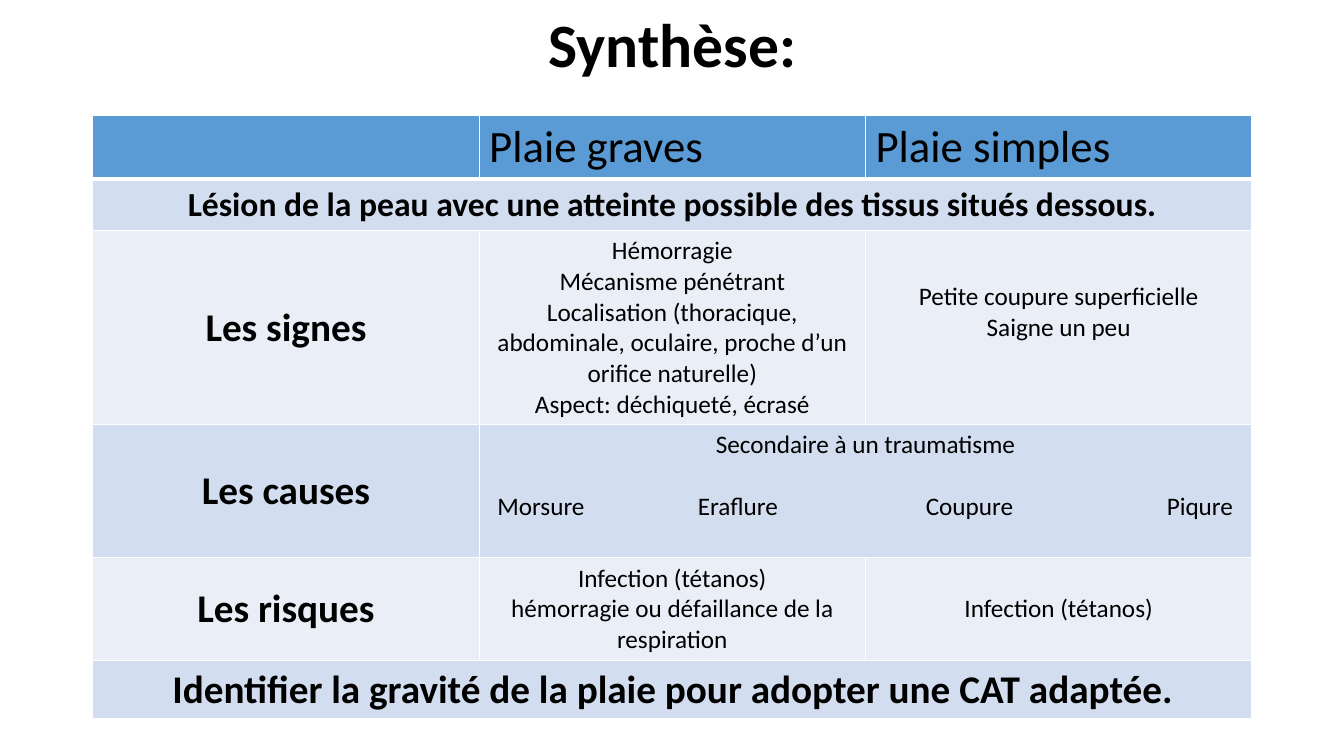
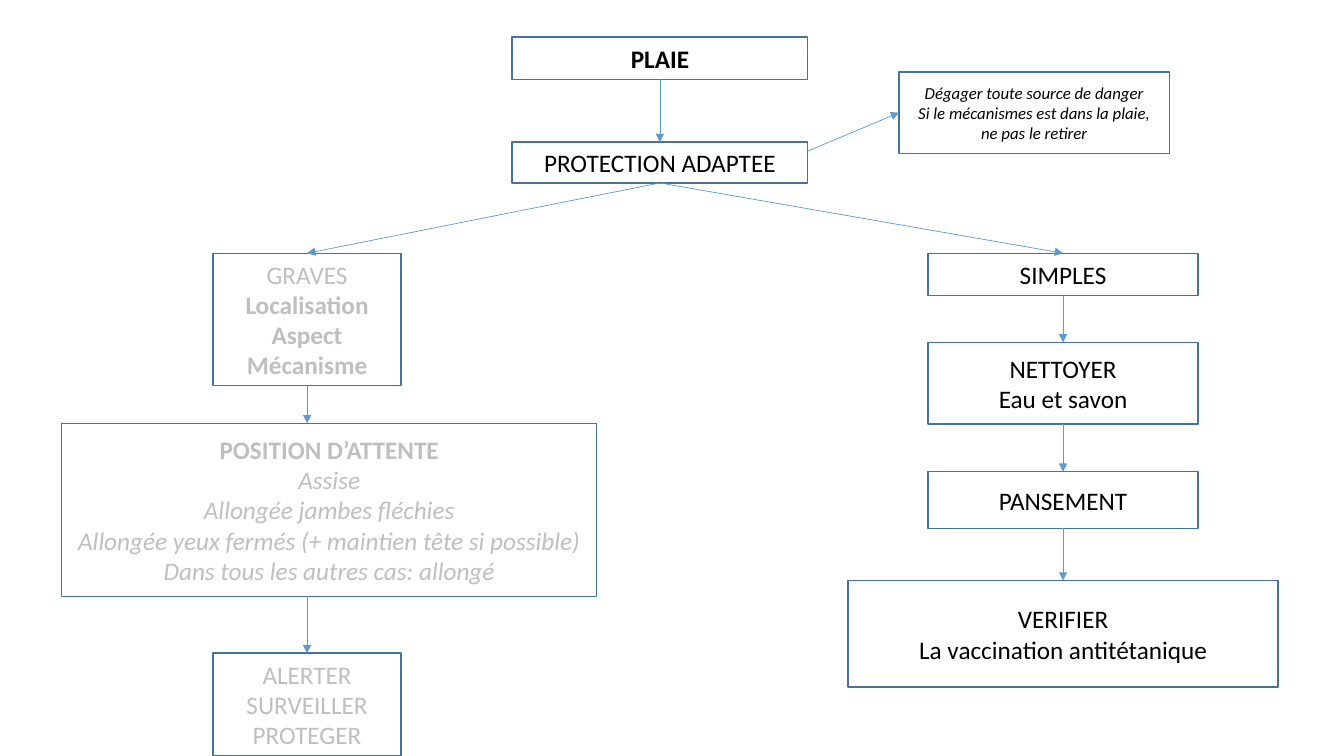
import pptx
import pptx.dml.color
import pptx.enum.shapes
import pptx.enum.text
import pptx.oxml.ns
import pptx.util
from lxml import etree

RGBColor = pptx.dml.color.RGBColor
ALIGN = pptx.enum.text.PP_ALIGN
ANCHOR = pptx.enum.text.MSO_ANCHOR
qn = pptx.oxml.ns.qn

# Colours
BLACK = RGBColor(0x00, 0x00, 0x00)
WHITE = RGBColor(0xFF, 0xFF, 0xFF)
GREY = RGBColor(0xBF, 0xBF, 0xBF)
BLUE = RGBColor(0x5B, 0x9B, 0xD5)
OUTLINE = RGBColor(0x43, 0x73, 0x9E)
BAND_DARK = RGBColor(0xD2, 0xDE, 0xEF)
BAND_LIGHT = RGBColor(0xEA, 0xEF, 0xF7)

# Sides of a rectangle for joined connectors
TOP, LEFT, BOTTOM = 0, 1, 2
FONT = "Calibri"


def write(paragraph, text, size=18, bold=False, italic=False, color=BLACK,
          align=ALIGN.CENTER, before=0, tabs=(), spacing=None):
    """Fill one paragraph with text in the given format."""
    if tabs:
        tab_list = etree.SubElement(paragraph._p.get_or_add_pPr(), qn("a:tabLst"))
        for stop in tabs:
            etree.SubElement(tab_list, qn("a:tab"),
                             pos=str(pptx.util.Inches(stop)), algn="l")
    paragraph.alignment = align
    if before:
        paragraph.space_before = pptx.util.Pt(before)
    if spacing:
        paragraph.line_spacing = spacing
    run = paragraph.add_run()
    run.text = text
    font = run.font
    font.name, font.size = FONT, pptx.util.Pt(size)
    font.bold, font.italic = bold, italic
    font.color.rgb = color


def write_lines(frame, lines, **shared):
    """Write one paragraph per line; a line is text or (text, own format)."""
    for index, line in enumerate(lines):
        text, own = (line, {}) if isinstance(line, str) else line
        paragraph = frame.add_paragraph() if index else frame.paragraphs[0]
        write(paragraph, text, **{**shared, **own})


class Deck:
    """Style and current slide; positions are on a grid of 100 x 100."""

    def __init__(self):
        self.file = pptx.Presentation()
        self.file.slide_width = pptx.util.Inches(13.33)
        self.file.slide_height = pptx.util.Inches(7.5)
        self.slide = None

    def x(self, columns):
        return round(self.file.slide_width * columns / 100)

    def y(self, rows):
        return round(self.file.slide_height * rows / 100)

    def new_slide(self):
        self.slide = self.file.slides.add_slide(self.file.slide_layouts[6])

    def title(self, text):
        heading = self.slide.shapes.add_textbox(
            self.x(6.9), 0, self.x(86.25), self.y(12.7)).text_frame
        heading.word_wrap = True
        heading.vertical_anchor = ANCHOR.MIDDLE
        write(heading.paragraphs[0], text, size=44, bold=True, spacing=0.9)

    def step(self, center, top, width, height, lines, **fmt):
        """Outlined box centred on a column."""
        box = self.slide.shapes.add_shape(
            pptx.enum.shapes.MSO_SHAPE.RECTANGLE, self.x(center - width / 2),
            self.y(top), self.x(width), self.y(height))
        box.shadow.inherit = False
        box.fill.background()
        box.line.color.rgb = OUTLINE
        box.line.width = pptx.util.Pt(1)
        box.text_frame.word_wrap = True
        box.text_frame.vertical_anchor = ANCHOR.MIDDLE
        write_lines(box.text_frame, lines, **fmt)
        return box

    def arrow(self, start, end):
        """Arrow between ends given as (box, side) or (column, row)."""
        link = self.slide.shapes.add_connector(
            pptx.enum.shapes.MSO_CONNECTOR.STRAIGHT, 0, 0, 0, 0)
        if isinstance(start[0], (int, float)):
            link.begin_x, link.begin_y = self.x(start[0]), self.y(start[1])
        else:
            link.begin_connect(*start)
        if isinstance(end[0], (int, float)):
            link.end_x, link.end_y = self.x(end[0]), self.y(end[1])
        else:
            link.end_connect(*end)
        link.line.color.rgb = BLUE
        link.line.width = pptx.util.Pt(0.5)
        etree.SubElement(link.line._get_or_add_ln(), qn("a:tailEnd"), type="triangle")
        etree.SubElement(link._element.spPr, qn("a:effectLst"))

    def table(self, left, top, width, columns, heights):
        grid = self.slide.shapes.add_table(
            len(heights), columns, self.x(left), self.y(top),
            self.x(width), self.y(sum(heights))).table
        grid.first_row = grid.horz_banding = False
        for row, height in zip(grid.rows, heights):
            row.height = self.y(height)
        for index, row in enumerate(grid.rows):
            band = BAND_DARK if index % 2 else BAND_LIGHT
            for cell in row.cells:
                self.borders(cell, bottom=3 if index == 0 else 1)
                cell.fill.solid()
                cell.fill.fore_color.rgb = band if index else BLUE
                cell.vertical_anchor = ANCHOR.MIDDLE
        return grid

    def borders(self, cell, bottom):
        properties = cell._tc.get_or_add_tcPr()
        for side, points in (("L", 1), ("R", 1), ("T", 1), ("B", bottom)):
            edge = etree.SubElement(properties, qn("a:ln" + side),
                                    w=str(pptx.util.Pt(points)))
            fill = etree.SubElement(edge, qn("a:solidFill"))
            etree.SubElement(fill, qn("a:srgbClr"), val=str(WHITE))


def build_summary(deck):
    deck.new_slide()
    deck.title("Synthèse:")
    summary = deck.table(6.9, 15.2, 86.25, 3, [8.5, 6.8, 25.7, 17.6, 13.6, 7.7])

    # Merged cells
    for row, first in ((1, 0), (3, 1), (5, 0)):
        summary.cell(row, first).merge(summary.cell(row, 2))

    # Cell texts by row and column
    header = dict(size=32, align=ALIGN.LEFT)
    label = dict(size=28, bold=True)
    causes = "Morsure\tEraflure\tCoupure\tPiqure"
    contents = {
        (0, 1): (["Plaie graves"], header),
        (0, 2): (["Plaie simples"], header),
        (1, 0): (["Lésion de la peau avec une atteinte possible des tissus "
                  "situés dessous."], dict(size=24, bold=True)),
        (2, 0): (["Les signes"], label),
        (2, 1): (["Hémorragie", "Mécanisme pénétrant",
                  "Localisation (thoracique, abdominale, oculaire, proche "
                  "d’un orifice naturelle)",
                  "Aspect: déchiqueté, écrasé"], {}),
        (2, 2): (["Petite coupure superficielle", "Saigne un peu"], {}),
        (3, 0): (["Les causes"], label),
        (3, 1): (["Secondaire à un traumatisme",
                  (causes, dict(align=ALIGN.LEFT, before=22,
                                tabs=(1.99, 4.25, 6.64)))], {}),
        (4, 0): (["Les risques"], label),
        (4, 1): (["Infection (tétanos)",
                  "hémorragie ou défaillance de la respiration"], {}),
        (4, 2): (["Infection (tétanos)"], {}),
        (5, 0): (["Identifier la gravité de la plaie pour adopter une CAT "
                  "adaptée."], label),
    }
    for place, (lines, fmt) in contents.items():
        write_lines(summary.cell(*place).text_frame, lines, **fmt)

    # Cells set off from the middle
    summary.cell(2, 2).margin_bottom = pptx.util.Inches(0.35)
    causes_cell = summary.cell(3, 1)
    causes_cell.vertical_anchor = ANCHOR.TOP
    causes_cell.margin_left = causes_cell.margin_right = pptx.util.Inches(0.18)


def build_flow(deck):
    deck.new_slide()
    trunk, severe_axis, simple_axis = 49.1, 22.85, 79.1

    # Common trunk
    wound = deck.step(trunk, 4.9, 22, 5.6, ["PLAIE"], bold=True)
    protection = deck.step(trunk, 18.8, 22, 5.4, ["PROTECTION ADAPTEE"])
    danger = deck.step(76.95, 9.5, 20.1, 10.8, [
        "Dégager toute source de danger",
        "Si le mécanismes est dans la plaie, ne pas le retirer"],
        size=12, italic=True)

    # Severe wounds
    strong, slanted = dict(bold=True), dict(italic=True)
    severe = deck.step(severe_axis, 33.5, 14, 17.5, [
        "GRAVES", ("Localisation", strong), ("Aspect", strong),
        ("Mécanisme", strong)], color=GREY)
    deck.step(24.5, 56, 39.8, 22.9, [
        ("POSITION D’ATTENTE", strong), ("Assise", slanted),
        ("Allongée jambes fléchies", slanted),
        ("Allongée yeux fermés (+ maintien tête si possible)", slanted),
        ("Dans tous les autres cas: allongé", slanted)], color=GREY)
    alert = deck.step(severe_axis, 86.4, 14, 13.6,
                      ["ALERTER", "SURVEILLER", "PROTEGER"], color=GREY)

    # Simple wounds
    simple_steps = [deck.step(simple_axis, *step) for step in (
        (33.5, 20.1, 5.6, ["SIMPLES"]),
        (45.3, 20.1, 10.8, ["NETTOYER", "Eau et savon"]),
        (62.4, 20.1, 7.5, ["PANSEMENT"]),
        (76.8, 32, 14.1, ["VERIFIER", "La vaccination antitétanique"]))]

    # Arrows
    for upper, lower in [(wound, protection), (protection, severe),
                         (protection, simple_steps[0]),
                         *zip(simple_steps, simple_steps[1:])]:
        deck.arrow((upper, BOTTOM), (lower, TOP))
    deck.arrow((60.1, 20), (danger, LEFT))
    deck.arrow((severe, BOTTOM), (severe_axis, 56))
    deck.arrow((severe_axis, 78.9), (alert, TOP))


def main():
    deck = Deck()
    build_summary(deck)
    build_flow(deck)
    deck.file.save("out.pptx")


if __name__ == "__main__":
    main()
